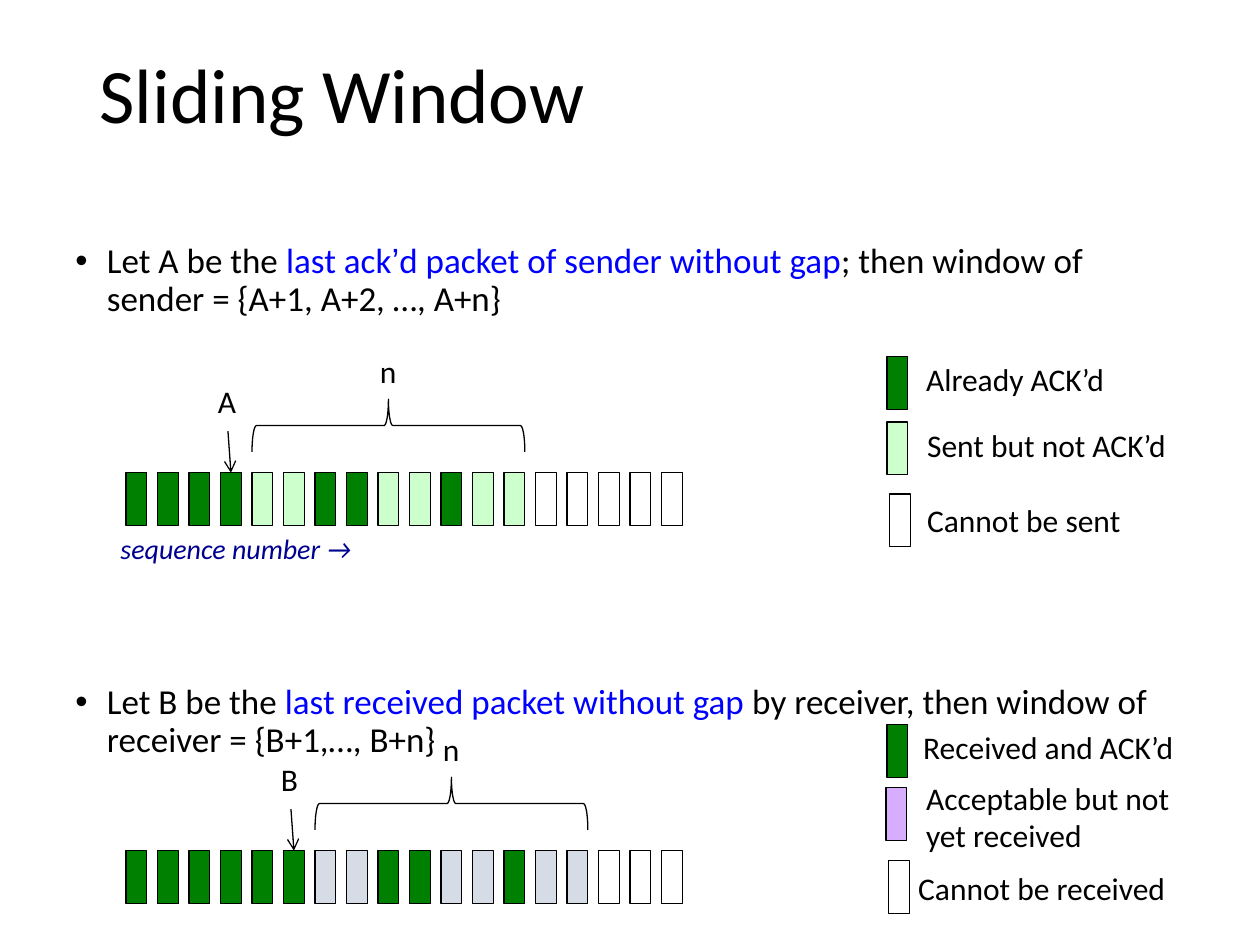
"""Build a slide on sliding windows at the sender and the receiver."""
import pptx
import pptx.dml.color
import pptx.enum.shapes
import pptx.enum.text
import pptx.oxml.ns
import pptx.util
from lxml import etree
from pptx.util import Cm, Pt

COLORS = {
    "text": "000000", "term": "0000FF", "sequence": "000090",
    "acked": "008000", "sent": "CCFFCC", "acceptable": "D6DCE5",
    "acceptable_key": "D6ADFF", "blocked": "FFFFFF",
}
CELL_KINDS = {"G": "acked", "S": "sent", "R": "acceptable", "W": "blocked"}
CELL_W, CELL_H, PITCH, ROW_LEFT = 0.42, 1.06, 0.635, 2.54
WINDOW = 9
SHAPES = pptx.enum.shapes.MSO_SHAPE


def rgb(name):
    """Return the colour with this name."""
    return pptx.dml.color.RGBColor.from_string(COLORS[name])


def add_xml(parent, tag, **attrs):
    """Append a DrawingML element to the parent."""
    return etree.SubElement(parent, pptx.oxml.ns.qn(tag), attrs)


def style_run(r, size, color="text", font="Calibri", italic=None):
    """Set the font of a run."""
    r.font.size = Pt(size)
    r.font.name = font
    r.font.italic = italic
    r.font.color.rgb = rgb(color)


def style_line(shape):
    """Give a shape or connector the thin black line."""
    shape.line.color.rgb = rgb("text")
    shape.line.width = Pt(0.75)


def add_title(s, text):
    """Place and format the title placeholder."""
    title = s.shapes.title
    title.left, title.top, title.width, title.height = Cm(1.75), Cm(1.02), Cm(21.9), Cm(3.68)
    tf = title.text_frame
    tf.text = text
    tf.vertical_anchor = pptx.enum.text.MSO_ANCHOR.TOP
    p = tf.paragraphs[0]
    p.alignment = pptx.enum.text.PP_ALIGN.LEFT
    p.line_spacing = 0.9
    style_run(p.runs[0], 44)


def add_bullets(s, bullets):
    """Add one text box with a bullet per (space before, runs) pair."""
    tf = s.shapes.add_textbox(Cm(1.27), Cm(4.78), Cm(22.86), Cm(10.7)).text_frame
    tf.word_wrap = True
    for i, (space, runs) in enumerate(bullets):
        p = tf.add_paragraph() if i else tf.paragraphs[0]
        p.line_spacing = 0.9
        p.space_before = Pt(space)
        pPr = p._p.get_or_add_pPr()
        pPr.set("marL", str(Cm(0.635)))
        pPr.set("indent", str(-Cm(0.635)))
        add_xml(pPr, "a:buFont", typeface="Arial")
        add_xml(pPr, "a:buChar", char="•")
        for text, color, font in runs:
            r = p.add_run()
            r.text = text
            style_run(r, 20, color, font)


def add_label(s, text, x, y, width, size=18, color="text", italic=None):
    """Add a text label."""
    tf = s.shapes.add_textbox(Cm(x), Cm(y), Cm(width), Cm(1.02)).text_frame
    tf.word_wrap = True
    tf.text = text
    style_run(tf.paragraphs[0].runs[0], size, color, italic=italic)


def add_cell(s, x, y, color):
    """Add one packet cell."""
    cell = s.shapes.add_shape(SHAPES.RECTANGLE, Cm(x), Cm(y), Cm(CELL_W), Cm(CELL_H))
    cell.shadow.inherit = False
    cell.fill.solid()
    cell.fill.fore_color.rgb = rgb(color)
    style_line(cell)
    return cell


def add_brace(s, center, y):
    """Add a brace over the window, centred on a point."""
    length = (WINDOW - 1) * PITCH + CELL_W
    brace = s.shapes.add_shape(SHAPES.LEFT_BRACE, Cm(center - CELL_H / 2),
                               Cm(y - length / 2), Cm(CELL_H), Cm(length))
    brace.rotation = 90
    brace.shadow.inherit = False
    brace.fill.background()
    style_line(brace)


def add_pointer(s, x, y, cell):
    """Add an arrow from a point to the top of a cell."""
    line = s.shapes.add_connector(pptx.enum.shapes.MSO_CONNECTOR.STRAIGHT,
                                  Cm(x), Cm(y), Cm(x), Cm(y))
    line.end_connect(cell, 0)
    style_line(line)
    add_xml(line.line._get_or_add_ln(), "a:tailEnd", type="arrow")
    add_xml(line._element.spPr, "a:effectLst")


def add_packets(s, y, kinds, mark, last):
    """Add a row of packets with its marked packet and the window after it."""
    cells = [add_cell(s, ROW_LEFT + i * PITCH, y, CELL_KINDS[kind])
             for i, kind in enumerate(kinds)]
    mark_x = ROW_LEFT + last * PITCH
    center = mark_x + PITCH * (WINDOW + 1) / 2 + CELL_W / 2
    add_brace(s, center, y - 0.95)
    add_label(s, "n", center - 0.42, y - 2.56, 0.94)
    add_label(s, mark, mark_x - 0.3, y - 1.96, 0.94)
    add_pointer(s, mark_x + 0.15, y - 0.84, cells[last])


def add_legend(s, entries):
    """Add legend cells, each with its label."""
    for color, x, y, text, text_x, text_y in entries:
        add_cell(s, x, y, color)
        add_label(s, text, text_x, text_y, 5.8)


def main():
    """Build and save the slide."""
    prs = pptx.Presentation()
    prs.slide_width, prs.slide_height = Cm(25.4), Cm(19.05)
    s = prs.slides.add_slide(prs.slide_layouts[5])
    add_title(s, "Sliding Window")
    add_bullets(s, [
        (0, [("Let A be the ", "text", "Calibri"),
             ("last ack", "term", "Calibri"),
             ("’", "term", "Arial"),
             ("d packet of sender without gap", "term", "Calibri"),
             ("; then window of sender = {A+1, A+2, …, A+n}", "text", "Calibri")]),
        (209, [("Let B be the ", "text", "Calibri"),
               ("last received packet without gap", "term", "Calibri"),
               (" by receiver, then window of receiver = {B+1,…, B+n}", "text", "Calibri")]),
    ])
    add_packets(s, 17.15, "GGGGGGRRGGRRGRRWWW", "B", 5)
    add_legend(s, [
        ("acked", 17.88, 14.61, "Received and ACK’d", 18.36, 14.55),
        ("acceptable_key", 17.86, 15.88, "Acceptable but not yet received", 18.42, 15.57),
        ("blocked", 17.91, 17.35, "Cannot be received", 18.26, 17.4),
    ])
    add_packets(s, 9.53, "GGGGSSGGSSGSSWWWWW", "A", 3)
    add_legend(s, [
        ("acked", 17.88, 7.19, "Already ACK’d", 18.42, 7.14),
        ("sent", 17.88, 8.51, "Sent but not ACK’d", 18.44, 8.46),
        ("blocked", 17.93, 9.96, "Cannot be sent", 18.44, 9.98),
    ])
    add_label(s, "sequence number →", 2.18, 10.6, 7.34, 16, "sequence", True)
    prs.save("out.pptx")


if __name__ == "__main__":
    main()
